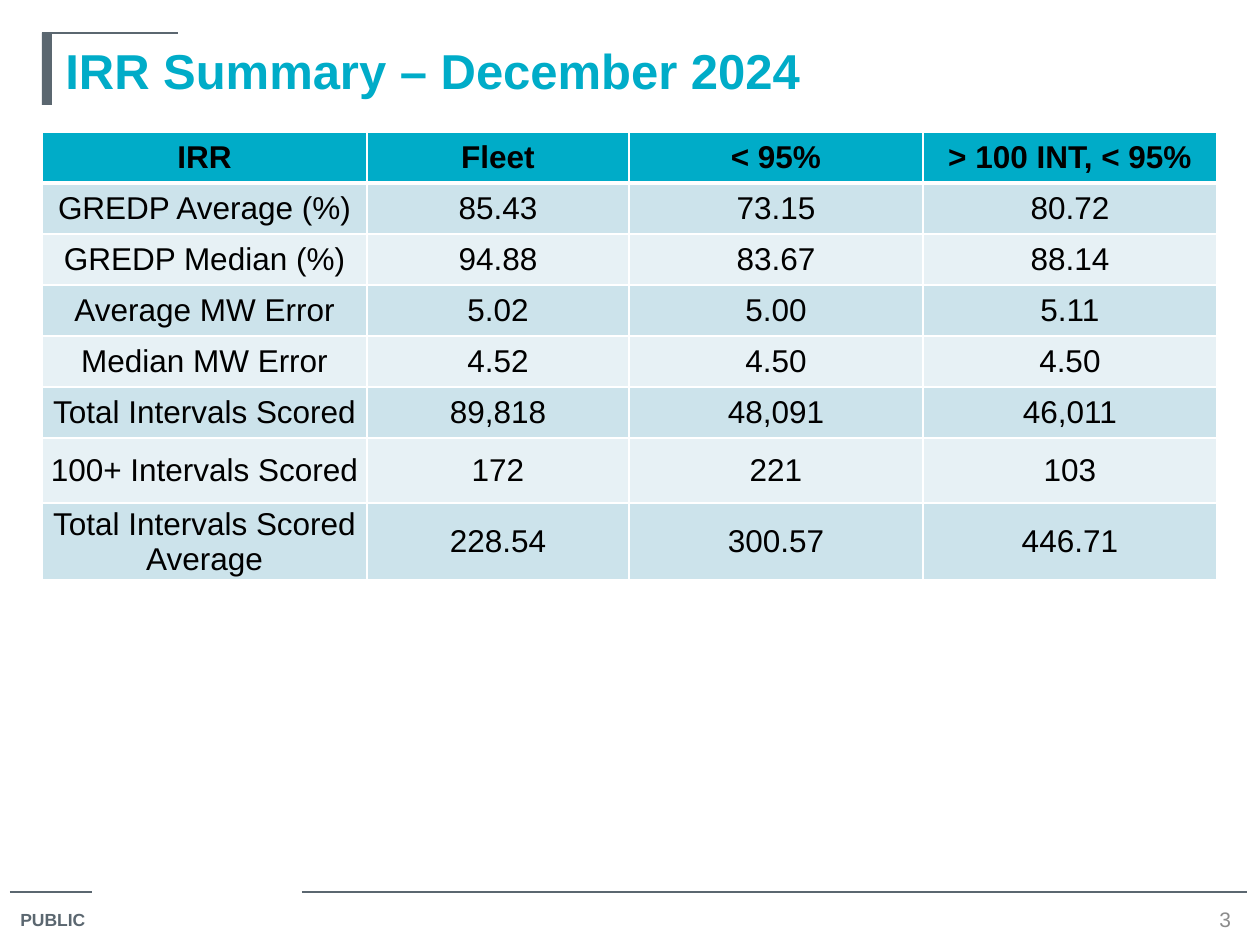
import pptx
import pptx.dml.color
import pptx.enum.shapes
import pptx.enum.text
import pptx.oxml
import pptx.oxml.ns
import pptx.util

SCALE = 914400 / 126
ALIGN = pptx.enum.text.PP_ALIGN
ANCHOR = pptx.enum.text.MSO_ANCHOR
SHAPE = pptx.enum.shapes.MSO_SHAPE
CONNECTOR = pptx.enum.shapes.MSO_CONNECTOR

TEAL, SLATE, GRAY = "00ACC8", "5B6770", "8C8C8C"
BLACK, WHITE = "000000", "FFFFFF"
BANDS = ["CCE3EB", "E7F1F5"]

COL_WIDTHS = [325, 262, 294, 294]
ROW_HEIGHTS = [51] * 6 + [65, 62]
ROWS = [
    ["IRR", "Fleet", "< 95%", "> 100 INT, < 95%"],
    ["GREDP Average (%)", "85.43", "73.15", "80.72"],
    ["GREDP Median (%)", "94.88", "83.67", "88.14"],
    ["Average MW Error", "5.02", "5.00", "5.11"],
    ["Median MW Error", "4.52", "4.50", "4.50"],
    ["Total Intervals Scored", "89,818", "48,091", "46,011"],
    ["100+ Intervals Scored", "172", "221", "103"],
    ["Total Intervals Scored Average", "228.54", "300.57", "446.71"],
]


def px(*values):
    return [pptx.util.Emu(round(v * SCALE)) for v in values]


def rgb(color):
    return pptx.dml.color.RGBColor.from_string(color)


class Deck:
    font = "Arial"

    def __init__(self, width, height):
        self.prs = pptx.Presentation()
        self.prs.slide_width, self.prs.slide_height = px(width, height)
        self.s = self.prs.slides.add_slide(self.prs.slide_layouts[6])

    def fill_text(self, tf, text, size, color, bold=False, align=ALIGN.LEFT):
        p = tf.paragraphs[0]
        p.alignment = align
        r = p.add_run()
        r.text = text
        style = {"name": self.font, "size": pptx.util.Pt(size), "bold": bold}
        for name, value in style.items():
            setattr(r.font, name, value)
        r.font.color.rgb = rgb(color)

    def text(self, box, text, size, color, anchor=ANCHOR.TOP, **style):
        tf = self.s.shapes.add_textbox(*px(*box)).text_frame
        tf.word_wrap = True
        tf.vertical_anchor = anchor
        self.fill_text(tf, text, size, color, **style)

    def rect(self, box, color):
        sp = self.s.shapes.add_shape(SHAPE.RECTANGLE, *px(*box))
        sp.shadow.inherit = False
        sp.fill.solid()
        sp.fill.fore_color.rgb = rgb(color)
        sp.line.fill.background()

    def rule(self, x1, x2, y, color):
        sp = self.s.shapes.add_connector(CONNECTOR.STRAIGHT, *px(x1, y, x2, y))
        sp.line.color.rgb = rgb(color)
        sp.line.width = pptx.util.Pt(0.75)
        sp._element.spPr.append(pptx.oxml.parse_xml(
            f'<a:effectLst {pptx.oxml.ns.nsdecls("a")}/>'))

    def borders(self, cell, widths, color):
        tcPr = cell._tc.get_or_add_tcPr()
        for i, (side, width) in enumerate(widths.items()):
            tcPr.insert(i, pptx.oxml.parse_xml(
                f'<a:ln{side} {pptx.oxml.ns.nsdecls("a")} w="{pptx.util.Pt(width)}">'
                f'<a:solidFill><a:srgbClr val="{color}"/></a:solidFill></a:ln{side}>'))

    def table(self, left, top, rows, widths, heights):
        box = px(left, top, sum(widths), sum(heights))
        table = self.s.shapes.add_table(len(rows), len(widths), *box).table
        for col, width in zip(table.columns, px(*widths)):
            col.width = width
        for row, height in zip(table.rows, px(*heights)):
            row.height = height
        margin = px(1)[0]
        layout = {"margin_left": margin, "margin_right": margin, "margin_top": margin,
                  "margin_bottom": 0, "vertical_anchor": ANCHOR.MIDDLE}
        for i, values in enumerate(rows):
            header = i == 0
            edges = {"L": 1, "R": 1, "T": 3 if i == 1 else 1, "B": 3 if header else 1}
            for j, value in enumerate(values):
                cell = table.cell(i, j)
                for name, setting in layout.items():
                    setattr(cell, name, setting)
                cell.fill.solid()
                cell.fill.fore_color.rgb = rgb(TEAL if header else BANDS[(i - 1) % 2])
                self.borders(cell, edges, WHITE)
                self.fill_text(cell.text_frame, value, 18, BLACK, header, ALIGN.CENTER)


def main():
    deck = Deck(1260, 945)
    deck.rule(10, 92, 892, SLATE)
    deck.rule(302, 1247, 892, SLATE)
    deck.text((8, 903, 97, 35), "PUBLIC", 10, SLATE, bold=True)
    deck.rect((42, 33, 10, 72), SLATE)
    deck.rule(42, 178, 33, SLATE)
    deck.text((1207, 905, 32, 29), "3", 12, GRAY, ANCHOR.MIDDLE, align=ALIGN.CENTER)
    deck.text((53, 34, 1165, 98), "IRR Summary – December 2024", 28, TEAL, bold=True)
    deck.table(42, 132, ROWS, COL_WIDTHS, ROW_HEIGHTS)
    deck.prs.save("out.pptx")


if __name__ == "__main__":
    main()
